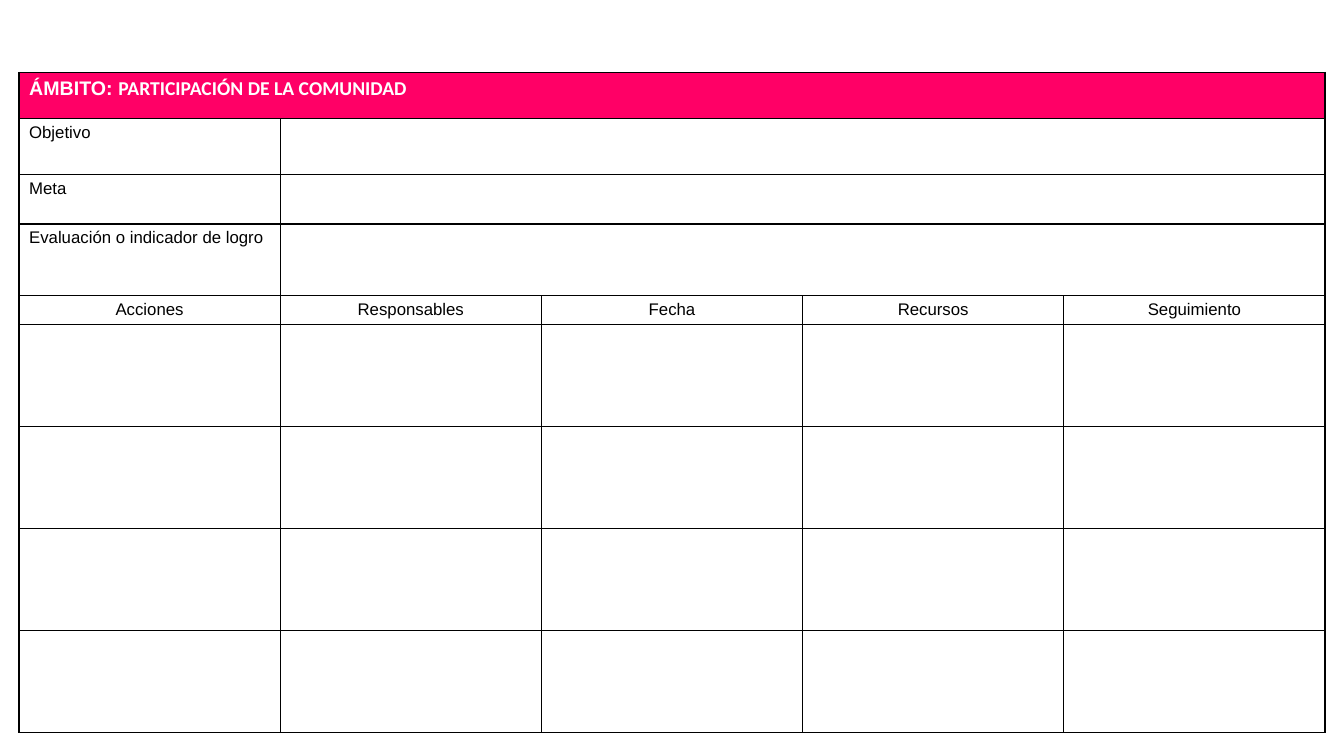
from lxml import etree
from pptx import Presentation
from pptx.dml.color import RGBColor
from pptx.enum.text import PP_ALIGN
from pptx.oxml.ns import qn
from pptx.util import Pt

CENTER = PP_ALIGN.CENTER
LEFT = PP_ALIGN.LEFT
HUES = {"pink": "FF0066", "white": "FFFFFF", "black": "000000"}


def write(cell, text, align=LEFT, hue="black", **form):
    para = cell.text_frame.paragraphs[0]
    para.alignment = align
    run = para.add_run()
    run.text = text
    for key, val in {"name": "Arial", "size": Pt(12), "bold": False, **form}.items():
        setattr(run.font, key, val)
    run.font.color.rgb = RGBColor.from_string(HUES[hue])


def frame(cell):
    props = cell._tc.get_or_add_tcPr()
    for side in ("lnL", "lnR", "lnT", "lnB"):
        line = etree.SubElement(props, qn("a:" + side), w=str(Pt(1)))
        fill = etree.SubElement(line, qn("a:solidFill"))
        etree.SubElement(fill, qn("a:srgbClr"), val=HUES["black"])


deck = Presentation()
deck.slide_width, deck.slide_height = Pt(960), Pt(540)
slide = deck.slides.add_slide(deck.slide_layouts[6])

# Planning table: banner, three goal rows, heads, four empty rows
tops = [33, 39.6, 35.6, 51.2, 20.4]
highs = tops + [73] * 4
wide = 186.6
grid = slide.shapes.add_table(
    len(highs), 5, Pt(13.6), Pt(51.8), Pt(wide * 5), Pt(sum(highs))
).table
for col in grid.columns:
    col.width = Pt(wide)
for row, high in zip(grid.rows, highs):
    row.height = Pt(high)

# Borders, margins and fills
for num, row in enumerate(grid.rows):
    for cell in row.cells:
        frame(cell)
        cell.margin_top = cell.margin_bottom = Pt(3.3)
        cell.fill.solid()
        cell.fill.fore_color.rgb = RGBColor.from_string(
            HUES["white" if num else "pink"]
        )

# Banner
grid.cell(0, 0).merge(grid.cell(0, 4))
for text, face in (("ÁMBITO: ", "Arial"), ("PARTICIPACIÓN DE LA COMUNIDAD", "Calibri")):
    write(grid.cell(0, 0), text, hue="white", name=face, size=Pt(14), bold=True)

# Goal rows
goals = ["Objetivo", "Meta", "Evaluación o indicador de logro"]
for num, text in enumerate(goals, 1):
    grid.cell(num, 1).merge(grid.cell(num, 4))
    write(grid.cell(num, 0), text)

# Column heads
heads = ["Acciones", "Responsables", "Fecha", "Recursos", "Seguimiento"]
for num, text in enumerate(heads):
    write(grid.cell(4, num), text, CENTER)

deck.save("out.pptx")
